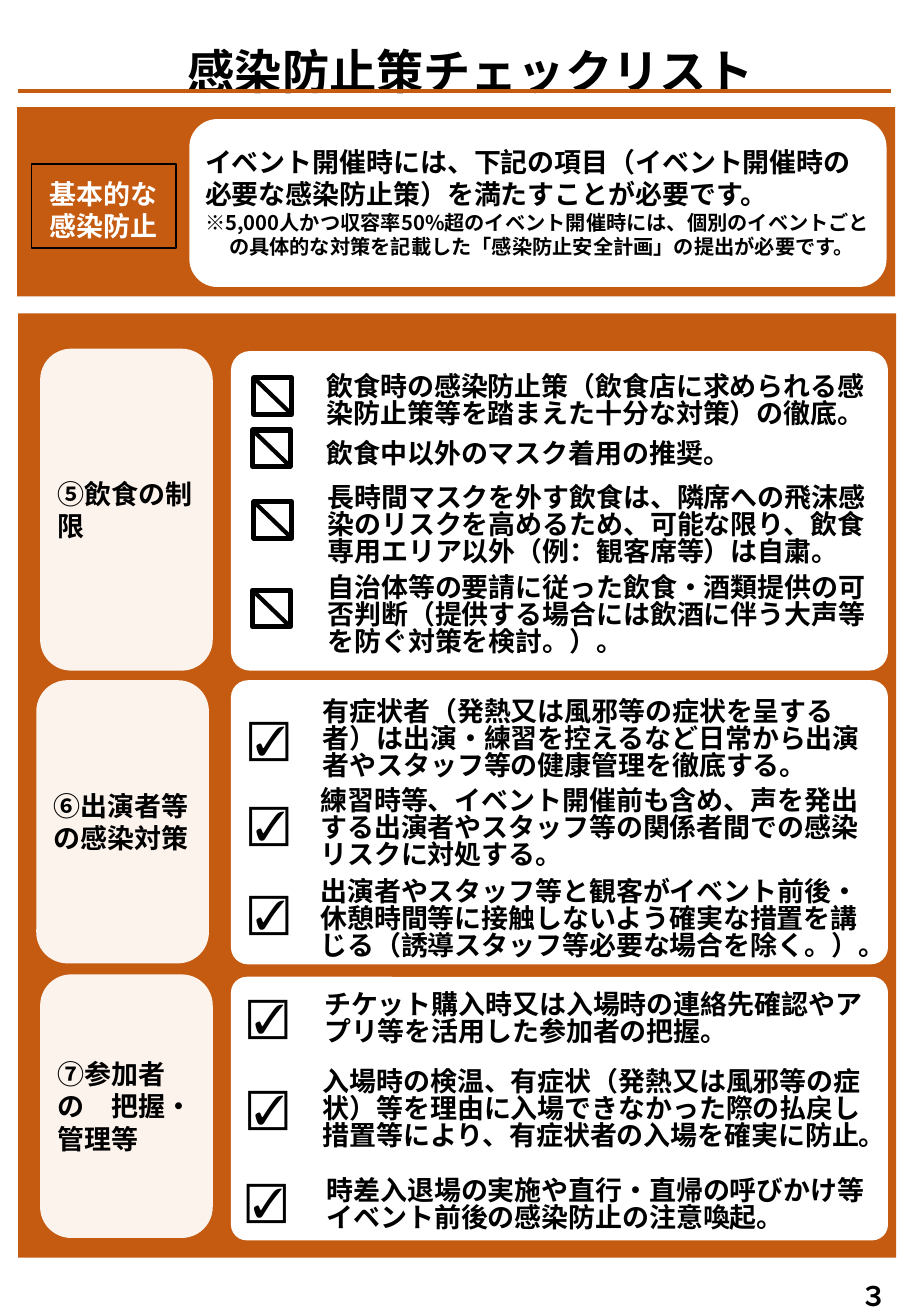
import pptx
import pptx.util
import pptx.dml.color
import pptx.enum.shapes
import pptx.enum.text
import pptx.oxml.ns
import lxml.etree

Cm, Pt = pptx.util.Cm, pptx.util.Pt
SHAPES = pptx.enum.shapes.MSO_SHAPE
ANCHOR = pptx.enum.text.MSO_ANCHOR
ALIGN = pptx.enum.text.PP_ALIGN
AUTO = pptx.enum.text.MSO_AUTO_SIZE

# Content
COLOURS = {"orange": "C55A11", "cream": "FDF3ED", "white": "FFFFFF", "black": "000000"}
FONT = "Noto Sans CJK JP"
TITLE = "感染防止策チェックリスト"
BADGE = [" 基本的な", " 感染防止"]
INTRO = "イベント開催時には、下記の項目（イベント開催時の必要な感染防止策）を満たすことが必要です。"
INTRO_NOTE = ("※5,000人かつ収容率50%超のイベント開催時には、個別のイベントごとの"
              "具体的な対策を記載した「感染防止安全計画」の提出が必要です。")
PAGE_NUMBER = "３"

# Lengths in cm. Card: top, height. Label: left, top, height.
# Items: mark left, mark top, text left, text top, text height, text.
SECTIONS = [
    {"label": "⑤飲食の制限", "card": (7.34, 6.68), "label_at": (0.84, 7.29, 6.73), "mark": "slash",
     "items": [
         (5.31, 7.9, 6.58, 7.7, 1.4,
          "飲食時の感染防止策（飲食店に求められる感染防止策等を踏まえた十分な対策）の徹底。"),
         (5.28, 8.99, 6.58, 9.07, 0.86, "飲食中以外のマスク着用の推奨。"),
         (5.31, 10.49, 6.6, 9.96, 2.01,
          "長時間マスクを外す飲食は、隣席への飛沫感染のリスクを高めるため、可能な限り、"
          "飲食専用エリア以外（例：観客席等）は自粛。"),
         (5.28, 12.34, 6.6, 11.84, 2.01,
          "自治体等の要請に従った飲食・酒類提供の可否判断"
          "（提供する場合には飲酒に伴う大声等を防ぐ対策を検討。）。")]},
    {"label": "⑥出演者等の感染対策", "card": (14.22, 5.94), "label_at": (0.76, 14.22, 5.92), "mark": "tick",
     "items": [
         (4.95, 14.78, 6.5, 14.43, 2.01,
          "有症状者（発熱又は風邪等の症状を呈する者）は出演・練習を控えるなど"
          "日常から出演者やスタッフ等の健康管理を徹底する。"),
         (4.95, 16.56, 6.45, 16.31, 2.01,
          "練習時等、イベント開催前も含め、声を発出する出演者やスタッフ等の"
          "関係者間での感染リスクに対処する。"),
         (4.95, 18.42, 6.45, 18.21, 2.01,
          "出演者やスタッフ等と観客がイベント前後・休憩時間等に接触しないよう"
          "確実な措置を講じる（誘導スタッフ等必要な場合を除く。）。")]},
    {"label": "⑦参加者の　把握・管理等", "card": (20.42, 5.51), "label_at": (0.84, 20.37, 5.51), "mark": "tick",
     "items": [
         (4.93, 20.6, 6.53, 20.6, 1.42,
          "チケット購入時又は入場時の連絡先確認やアプリ等を活用した参加者の把握。"),
         (4.93, 22.5, 6.5, 22.23, 1.96,
          "入場時の検温、有症状（発熱又は風邪等の症状）等を理由に入場できなかった際の"
          "払戻し措置等により、有症状者の入場を確実に防止。"),
         (4.9, 24.43, 6.58, 24.49, 1.4,
          "時差入退場の実施や直行・直帰の呼びかけ等イベント前後の感染防止の注意喚起。")]},
]

# Shared sizes
CARD_LEFT, CARD_WIDTH, LABEL_WIDTH, ITEM_WIDTH = 4.83, 13.74, 3.61, 11.89
BOX_SIZE, TICK_SIZE = (0.79, 0.76), (1.42, 1.27)
LABEL_FRAME = {"vertical_anchor": ANCHOR.MIDDLE, "margin_left": Cm(0.18), "margin_right": Cm(0.18),
               "margin_top": Cm(0.1), "margin_bottom": Cm(0.1)}
ITEM_FRAME = {"vertical_anchor": ANCHOR.BOTTOM, "auto_size": AUTO.SHAPE_TO_FIT_TEXT}
GROW = {"auto_size": AUTO.SHAPE_TO_FIT_TEXT}

prs = pptx.Presentation()
prs.slide_width, prs.slide_height = Cm(19.05), Cm(27.51)
slide = prs.slides.add_slide(prs.slide_layouts[6])


def rgb(name):
    return pptx.dml.color.RGBColor.from_string(COLOURS[name])


def apply(target, values):
    for key, value in values.items():
        setattr(target, key, value)


def panel(at, fill=None, line=None, kind=SHAPES.RECTANGLE, corner=None):
    shape = slide.shapes.add_shape(kind, *map(Cm, at))
    shape.shadow.inherit = False
    if corner is not None:
        shape.adjustments[0] = corner
    if fill:
        shape.fill.solid()
        shape.fill.fore_color.rgb = rgb(fill)
    else:
        shape.fill.background()
    if line:
        shape.line.color.rgb = rgb("black")
        shape.line.width = Pt(line)
    else:
        shape.line.fill.background()
    return shape


def write(shape, lines, size=16, colour="black", font=FONT, bold=True, frame=None, paragraph=None):
    text_frame = shape.text_frame
    apply(text_frame, {"word_wrap": True, **(frame or {})})
    for i, line in enumerate(lines):
        para = text_frame.paragraphs[0] if i == 0 else text_frame.add_paragraph()
        apply(para, {"alignment": ALIGN.LEFT, **(paragraph or {})})
        run = para.add_run()
        run.text = line
        apply(run.font, {"size": Pt(size), "bold": bold, "name": font})
        run.font.color.rgb = rgb(colour)
        east_asian = lxml.etree.SubElement(run.font._element, pptx.oxml.ns.qn("a:ea"))
        east_asian.set("typeface", font)
    return text_frame


def text_box(at, lines, **style):
    return write(slide.shapes.add_textbox(*map(Cm, at)), lines, **style)


def rule(ends, colour, width):
    line = slide.shapes.add_connector(pptx.enum.shapes.MSO_CONNECTOR.STRAIGHT, *map(Cm, ends))
    line.line.color.rgb = rgb(colour)
    line.line.width = Pt(width)
    lxml.etree.SubElement(line._element.spPr, pptx.oxml.ns.qn("a:effectLst"))


# Backgrounds
panel((0.38, 6.55, 18.36, 19.74), "orange")
panel((0.36, 2.24, 18.36, 3.96), "orange")

# Introduction
panel((3.96, 2.49, 14.58, 3.51), "white", kind=SHAPES.ROUNDED_RECTANGLE)
write(panel((0.66, 3.43, 3.02, 1.75), line=1), BADGE, colour="white",
      frame={"vertical_anchor": ANCHOR.MIDDLE, "margin_top": Cm(0.28)})
intro = text_box((4.04, 2.92, 14.43, 2.72), [INTRO, INTRO_NOTE])
note = intro.paragraphs[1]
note.runs[0].font.size = Pt(12)
for key, value in {"marL": Cm(0.5), "indent": -Cm(0.5)}.items():
    note._p.get_or_add_pPr().set(key, str(value))

# Title
text_box((-0.66, 0.76, 21.01, 1.45), [TITLE], size=28, frame=GROW, paragraph={"alignment": ALIGN.CENTER})
rule((0.38, 1.91, 18.64, 1.91), "orange", 2.25)

# Checklist sections
for section in SECTIONS:
    card_top, card_height = section["card"]
    panel((CARD_LEFT, card_top, CARD_WIDTH, card_height), "white",
          kind=SHAPES.ROUNDED_RECTANGLE, corner=0.06)
    left, top, height = section["label_at"]
    label = panel((left, top, LABEL_WIDTH, height), "cream", kind=SHAPES.ROUNDED_RECTANGLE, corner=0.18)
    write(label, [section["label"]], frame=LABEL_FRAME)
    for mark_left, mark_top, left, top, height, item in section["items"]:
        text_box((left, top, ITEM_WIDTH, height), [item], frame=ITEM_FRAME,
                 paragraph={"line_spacing": Pt(16)})
        if section["mark"] == "slash":
            width, height = BOX_SIZE
            panel((mark_left, mark_top, width, height), line=3)
            rule((mark_left, mark_top, mark_left + width, mark_top + height), "black", 2.5)
        else:
            text_box((mark_left, mark_top, *TICK_SIZE), ["☑"], size=24, font="Calibri", bold=False, frame=GROW)

# Page number
text_box((17.53, 26.62, 1.5, 0.94), [PAGE_NUMBER], frame={"vertical_anchor": ANCHOR.MIDDLE, **GROW},
         paragraph={"alignment": ALIGN.CENTER})

prs.save("out.pptx")
